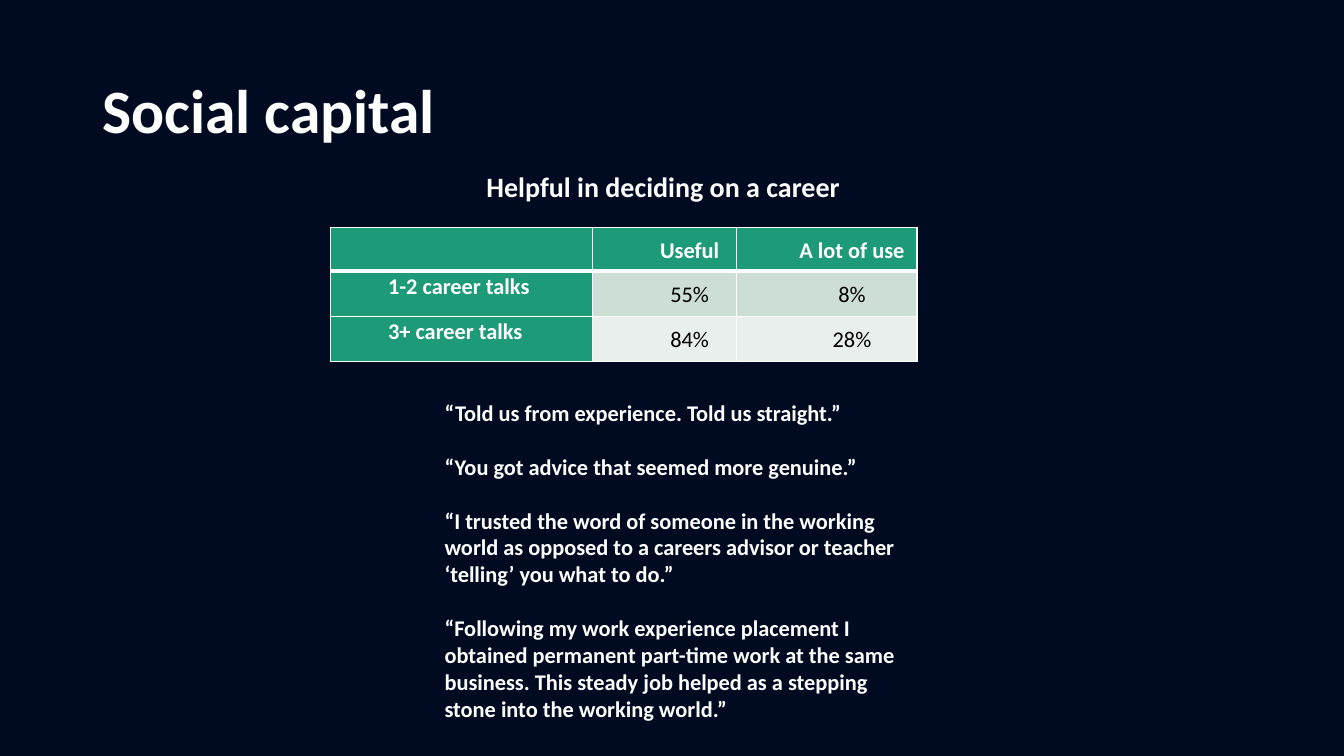
from dataclasses import dataclass

import lxml.etree
import pptx
import pptx.dml.color
import pptx.enum.text
import pptx.oxml.ns
import pptx.util
from pptx.dml.color import RGBColor
from pptx.enum.text import MSO_ANCHOR, MSO_AUTO_SIZE, PP_ALIGN
from pptx.util import Cm

NAVY = RGBColor(0x00, 0x0B, 0x22)
WHITE = RGBColor(0xFF, 0xFF, 0xFF)
BLACK = RGBColor(0x00, 0x00, 0x00)
GREEN = RGBColor(0x1D, 0x9A, 0x78)
SAGE = RGBColor(0xCD, 0xDE, 0xD6)
MIST = RGBColor(0xE8, 0xEF, 0xEC)
FONT = "Calibri"
BODY_SIZE = 16


@dataclass
class Area:
    left: float
    top: float
    width: float
    height: float

    def lengths(self) -> tuple:
        return Cm(self.left), Cm(self.top), Cm(self.width), Cm(self.height)


@dataclass
class TableRow:
    label: str
    values: tuple
    height: float
    value_fill: RGBColor
    value_color: RGBColor
    bold: bool


TITLE_AREA = Area(2.33, 1.01, 29.21, 3.68)
HEADING_AREA = Area(12.01, 4.14, 11.4, 1.11)
QUOTES_AREA = Area(10.95, 8.56, 11.99, 9.83)
TABLE_AREA = Area(8.33, 5.74, 14.78, 3.38)
COLUMN_WIDTHS = (6.6, 3.63, 4.55)

TABLE_ROWS = (
    TableRow("", ("Useful", "A lot of use"), 1.09, GREEN, WHITE, True),
    TableRow("1-2 career talks", ("55%", "8%"), 1.14, SAGE, BLACK, False),
    TableRow("3+ career talks", ("84%", "28%"), 1.14, MIST, BLACK, False),
)

QUOTES = (
    "“Told us from experience. Told us straight.”",
    "“You got advice that seemed more genuine.”",
    "“I trusted the word of someone in the working world as opposed to "
    "a careers advisor or teacher ‘telling’ you what to do.”",
    "“Following my work experience placement I obtained permanent part-time "
    "work at the same business. This steady job helped as a stepping stone "
    "into the working world.”",
)


def add_span(para, text: str, size: float, color: RGBColor = WHITE, bold: bool = True) -> None:
    span = para.add_run()
    span.text = text
    span.font.name = FONT
    span.font.size = pptx.util.Pt(size)
    span.font.bold = bold
    span.font.color.rgb = color


def set_indent(para, margin: float) -> None:
    properties = para._p.get_or_add_pPr()
    properties.set("marL", str(Cm(margin)))
    properties.set("indent", "0")


def place(box, area: Area) -> None:
    box.left, box.top, box.width, box.height = area.lengths()
    box.text_frame.word_wrap = True
    box.text_frame.auto_size = MSO_AUTO_SIZE.NONE


def add_borders(cell, top: float, bottom: float) -> None:
    properties = cell._tc.get_or_add_tcPr()
    for side, width in (("lnL", 1), ("lnR", 1), ("lnT", top), ("lnB", bottom)):
        line = lxml.etree.SubElement(properties, pptx.oxml.ns.qn(f"a:{side}"))
        line.set("w", str(pptx.util.Pt(width)))
        fill = lxml.etree.SubElement(line, pptx.oxml.ns.qn("a:solidFill"))
        color = lxml.etree.SubElement(fill, pptx.oxml.ns.qn("a:srgbClr"))
        color.set("val", str(WHITE))


def fill_cell(cell, text: str, fill: RGBColor, color: RGBColor, bold: bool, is_value: bool) -> None:
    cell.fill.solid()
    cell.fill.fore_color.rgb = fill
    cell.margin_left = cell.margin_right = Cm(0.18)
    cell.margin_top = cell.margin_bottom = 0
    cell.vertical_anchor = MSO_ANCHOR.MIDDLE if is_value else MSO_ANCHOR.TOP
    para = cell.text_frame.paragraphs[0]
    para.alignment = PP_ALIGN.CENTER if is_value else PP_ALIGN.LEFT
    para.line_spacing = 1.07
    set_indent(para, 1.27)
    if text:
        add_span(para, text, BODY_SIZE, color, bold)


def add_title(page) -> None:
    box = page.shapes.title
    place(box, TITLE_AREA)
    box.text_frame.vertical_anchor = MSO_ANCHOR.MIDDLE
    para = box.text_frame.paragraphs[0]
    para.alignment = PP_ALIGN.LEFT
    para.line_spacing = 0.9
    add_span(para, "Social capital", 44)


def add_heading(page) -> None:
    box = page.shapes.add_textbox(*HEADING_AREA.lengths())
    box.text_frame.word_wrap = True
    add_span(box.text_frame.paragraphs[0], "Helpful in deciding on a career", 20)


def add_quotes(page) -> None:
    box = page.placeholders[1]
    place(box, QUOTES_AREA)
    frame = box.text_frame
    frame.vertical_anchor = MSO_ANCHOR.TOP
    frame.margin_top = Cm(1.49)
    for index, quote in enumerate(QUOTES):
        para = frame.add_paragraph() if index else frame.paragraphs[0]
        para.alignment = PP_ALIGN.LEFT
        para.space_before = pptx.util.Pt(19.3 if index else 0)
        set_indent(para, 0)
        lxml.etree.SubElement(para._p.get_or_add_pPr(), pptx.oxml.ns.qn("a:buNone"))
        add_span(para, quote, BODY_SIZE)


def add_talks_table(page) -> None:
    table = page.shapes.add_table(
        len(TABLE_ROWS), len(COLUMN_WIDTHS), *TABLE_AREA.lengths()
    ).table
    for column, width in zip(table.columns, COLUMN_WIDTHS):
        column.width = Cm(width)
    for row_index, row in enumerate(TABLE_ROWS):
        table.rows[row_index].height = Cm(row.height)
        for column_index, text in enumerate((row.label, *row.values)):
            cell = table.cell(row_index, column_index)
            # The rule under the header is heavier than the others
            add_borders(cell, 3 if row_index == 1 else 1, 3 if row_index == 0 else 1)
            if column_index:
                fill_cell(cell, text, row.value_fill, row.value_color, row.bold, True)
            else:
                fill_cell(cell, text, GREEN, WHITE, True, False)


def main() -> None:
    # Deck and dark page
    deck = pptx.Presentation()
    deck.slide_width, deck.slide_height = Cm(33.87), Cm(19.05)
    page = deck.slides.add_slide(deck.slide_layouts[1])
    page.background.fill.solid()
    page.background.fill.fore_color.rgb = NAVY

    # Content
    add_title(page)
    add_heading(page)
    add_quotes(page)
    add_talks_table(page)
    deck.save("out.pptx")


if __name__ == "__main__":
    main()
